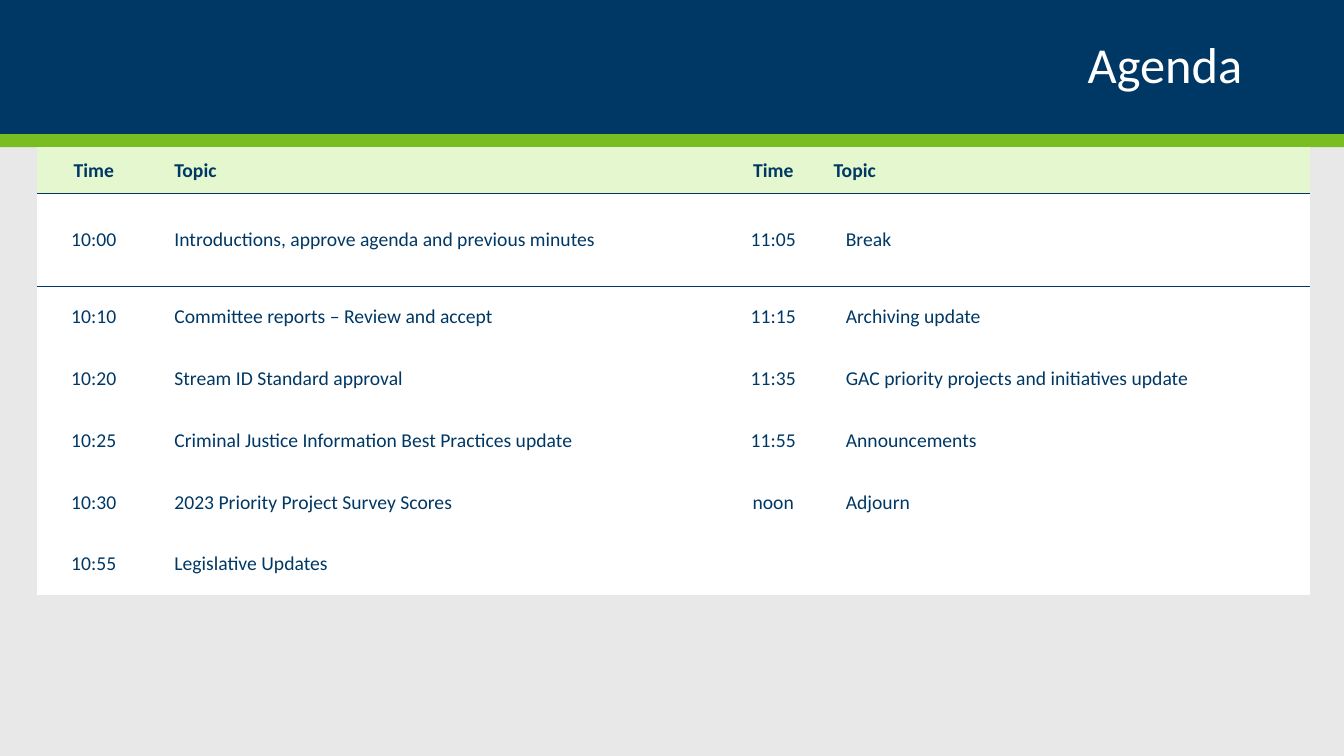
"""Build the agenda slide with its header band and two-column schedule table."""
from pptx import Presentation
from pptx.dml.color import RGBColor as Color
from pptx.enum.shapes import MSO_SHAPE as Preset
from pptx.enum.text import MSO_ANCHOR as Anchor, PP_ALIGN as Align
from pptx.oxml import parse_xml
from pptx.oxml.ns import nsdecls, qn
from pptx.util import Inches, Pt

TITLE = "Agenda"
HEADER = ("Time", "Topic", "", "Time", "Topic")
MORNING = [
    ("10:00", "Introductions, approve agenda and previous minutes"),
    ("10:10", "Committee reports – Review and accept"),
    ("10:20", "Stream ID Standard approval"),
    ("10:25", "Criminal Justice Information Best Practices update"),
    ("10:30", "2023 Priority Project Survey Scores"),
    ("10:55", "Legislative Updates"),
]
LATE_MORNING = [
    ("11:05", "Break"),
    ("11:15", "Archiving update"),
    ("11:35", "GAC priority projects and initiatives update"),
    ("11:55", "Announcements"),
    ("noon", "Adjourn"),
    ("", ""),
]
THEME = {
    "font": "Calibri",
    "title_size": 36,
    "table_size": 14,
    "navy": "003865",
    "green": "78BE21",
    "pale_green": "E4F7CE",
    "white": "FFFFFF",
    "background": "E8E8E8",
}
SLIDE_SIZE = (13.33, 7.5)
BANDS = [("navy", 0, 1.33), ("green", 1.33, 0.13)]
TITLE_BOX = (0.92, 0.17, 11.5, 1)
TABLE_ORIGIN = (0.37, 1.46)
COLUMN_WIDTHS = (1.12, 5.22, 0.48, 0.96, 4.84)
ROW_HEIGHTS = (0.46, 0.92, 0.61, 0.61, 0.62, 0.61, 0.61)
TIME_COLUMNS = (0, 3)
NO_STYLE = "{2D5ABB26-0587-4C30-8999-92F81FD0307C}"


def theme_color(name):
    return Color.from_string(THEME[name])


def set_values(target, values):
    for name, value in values.items():
        setattr(target, name, value)


def fill_solid(fill, color):
    fill.solid()
    fill.fore_color.rgb = theme_color(color)


def write(paragraph, text, size, color, align, bold=False):
    paragraph.alignment = align
    run = paragraph.add_run()
    run.text = text
    set_values(run.font, {"name": THEME["font"], "size": Pt(THEME[size]), "bold": bold})
    run.font.color.rgb = theme_color(color)


def add_band(slide, color, top, height):
    band = slide.shapes.add_shape(
        Preset.RECTANGLE, 0, Inches(top), Inches(SLIDE_SIZE[0]), Inches(height))
    band.shadow.inherit = False
    fill_solid(band.fill, color)
    band.line.fill.background()


def add_title(slide):
    frame = slide.shapes.add_textbox(*map(Inches, TITLE_BOX)).text_frame
    set_values(frame, {"word_wrap": True, "vertical_anchor": Anchor.MIDDLE})
    paragraph = frame.paragraphs[0]
    paragraph.line_spacing = 0.9
    write(paragraph, TITLE, "title_size", "white", Align.RIGHT)


def add_border(cell, side):
    border = parse_xml(
        f'<a:{side} {nsdecls("a")} w="{Pt(1)}"><a:solidFill>'
        f'<a:srgbClr val="{THEME["navy"]}"/></a:solidFill></a:{side}>')
    cell._tc.get_or_add_tcPr().insert(0, border)


def format_cell(cell, text, row, column):
    is_header = row == 0
    is_indented = column == 1 or (column == 4 and not is_header)
    vertical = Inches(0.06 if is_header else 0.12)
    set_values(cell, {
        "vertical_anchor": Anchor.MIDDLE,
        "margin_left": Inches(0.24 if is_indented else 0.12),
        "margin_right": Inches(0.12),
        "margin_top": vertical,
        "margin_bottom": vertical,
    })
    fill_solid(cell.fill, "pale_green" if is_header else "white")
    if row < 2:
        add_border(cell, "lnB" if is_header else "lnT")
    if text:
        align = Align.CENTER if column in TIME_COLUMNS else Align.LEFT
        write(cell.text_frame.paragraphs[0], text, "table_size", "navy", align, is_header)


def add_agenda(slide):
    rows = [HEADER] + [(*left, "", *right) for left, right in zip(MORNING, LATE_MORNING)]
    size = (sum(COLUMN_WIDTHS), sum(ROW_HEIGHTS))
    frame = slide.shapes.add_table(
        len(rows), len(HEADER), *map(Inches, TABLE_ORIGIN + size))
    table = frame.table
    set_values(table, {"first_row": False, "horz_banding": False})
    for style in table._tbl.iter(qn("a:tableStyleId")):
        style.text = NO_STYLE
    for column, width in zip(table.columns, COLUMN_WIDTHS):
        column.width = Inches(width)
    for row, height in zip(table.rows, ROW_HEIGHTS):
        row.height = Inches(height)
    for row, texts in enumerate(rows):
        for column, text in enumerate(texts):
            format_cell(table.cell(row, column), text, row, column)


def main():
    presentation = Presentation()
    width, height = map(Inches, SLIDE_SIZE)
    set_values(presentation, {"slide_width": width, "slide_height": height})
    slide = presentation.slides.add_slide(presentation.slide_layouts[6])
    fill_solid(slide.background.fill, "background")
    for band in BANDS:
        add_band(slide, *band)
    add_title(slide)
    add_agenda(slide)
    presentation.save("out.pptx")


if __name__ == "__main__":
    main()
